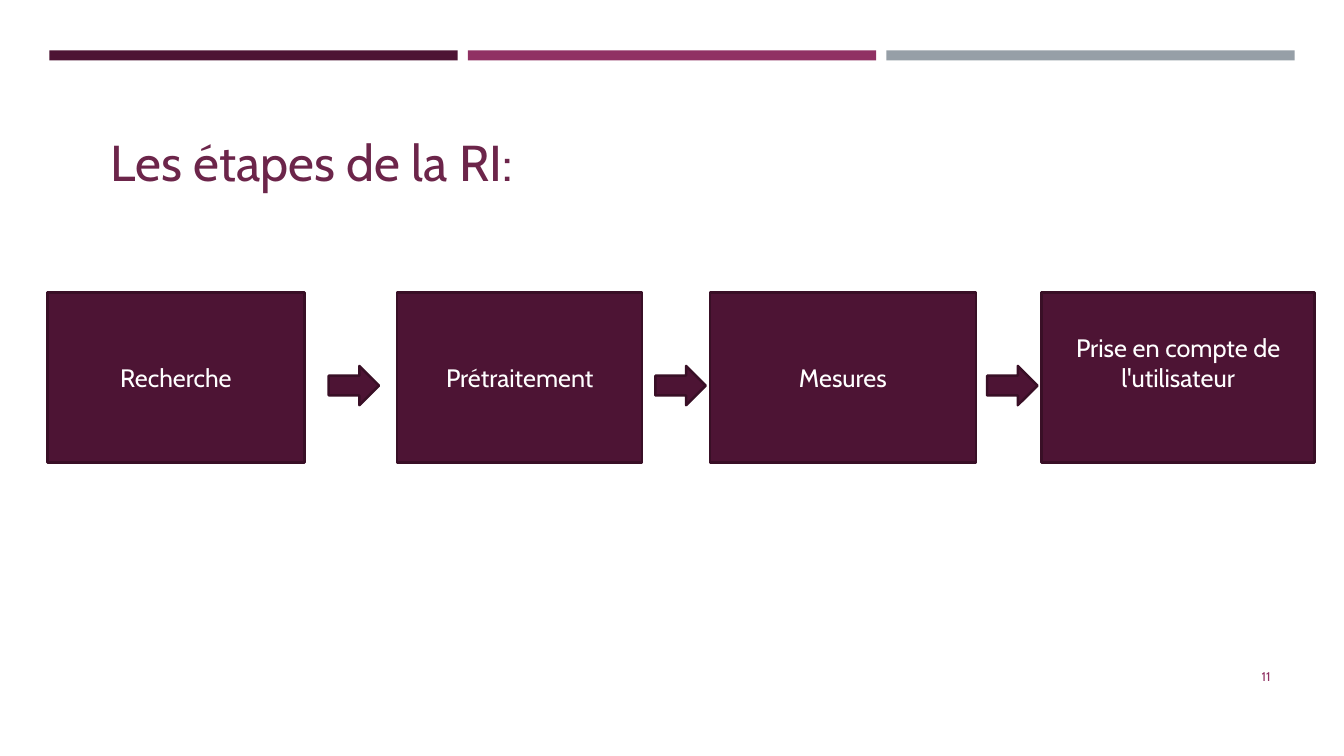
from pptx import Presentation
from pptx.dml.color import RGBColor
from pptx.enum import shapes, text
from pptx.util import Inches, Pt

PLUM, EDGE, WHITE = "4D1434", "390F26", "FFFFFF"
ROSE, GREY, TITLE = "903163", "969FA7", "6C254A"


def add_block(kind, left, top, width, height, fill, edge=None):
    block = page.shapes.add_shape(
        kind, Inches(left), Inches(top), Inches(width), Inches(height))
    block.shadow.inherit = False
    block.fill.solid()
    block.fill.fore_color.rgb = RGBColor.from_string(fill)
    if edge:
        block.line.color.rgb = RGBColor.from_string(edge)
        block.line.width = Pt(1.75)
    else:
        block.line.fill.background()
    return block


def write(box, words, size, color, align, anchor):
    frame = box.text_frame
    frame.word_wrap = True
    frame.vertical_anchor = anchor
    para = frame.paragraphs[0]
    para.alignment = align
    span = para.add_run()
    span.text = words
    for name, value in {"name": "Cabin", "size": Pt(size)}.items():
        setattr(span.font, name, value)
    span.font.color.rgb = RGBColor.from_string(color)


deck = Presentation()
deck.slide_width, deck.slide_height = Inches(13.33), Inches(7.5)
page = deck.slides.add_slide(deck.slide_layouts[6])
RECTANGLE = shapes.MSO_SHAPE.RECTANGLE
ALIGN, ANCHOR = text.PP_ALIGN, text.MSO_ANCHOR

# Header bars
for column, color in enumerate([PLUM, ROSE, GREY]):
    add_block(RECTANGLE, 0.49 + column * 4.15, 0.5, 4.05, 0.1, color)

title = page.shapes.add_textbox(Inches(1), Inches(1.25), Inches(4.92), Inches(0.71))
write(title, "Les étapes de la RI:", 36, TITLE, ALIGN.LEFT, ANCHOR.TOP)

# Steps
steps = [
    ("Recherche", 0.47, 2.55),
    ("Prétraitement", 3.94, 2.43),
    ("Mesures", 7.04, 2.64),
    ("Prise en compte de l'utilisateur", 10.33, 2.71),
]
for words, left, width in steps:
    step = add_block(RECTANGLE, left, 2.9, width, 1.69, PLUM, EDGE)
    write(step, words, 18, WHITE, ALIGN.CENTER, ANCHOR.MIDDLE)
step.text_frame.margin_bottom = Inches(0.35)  # the last label sits higher

for left in (3.26, 6.5, 9.79):
    add_block(shapes.MSO_SHAPE.RIGHT_ARROW, left, 3.63, 0.5, 0.39, PLUM, EDGE)

number = page.shapes.add_textbox(Inches(11.55), Inches(6.51), Inches(1.15), Inches(0.4))
write(number, "11", 9, ROSE, ALIGN.RIGHT, ANCHOR.MIDDLE)

deck.save("out.pptx")
